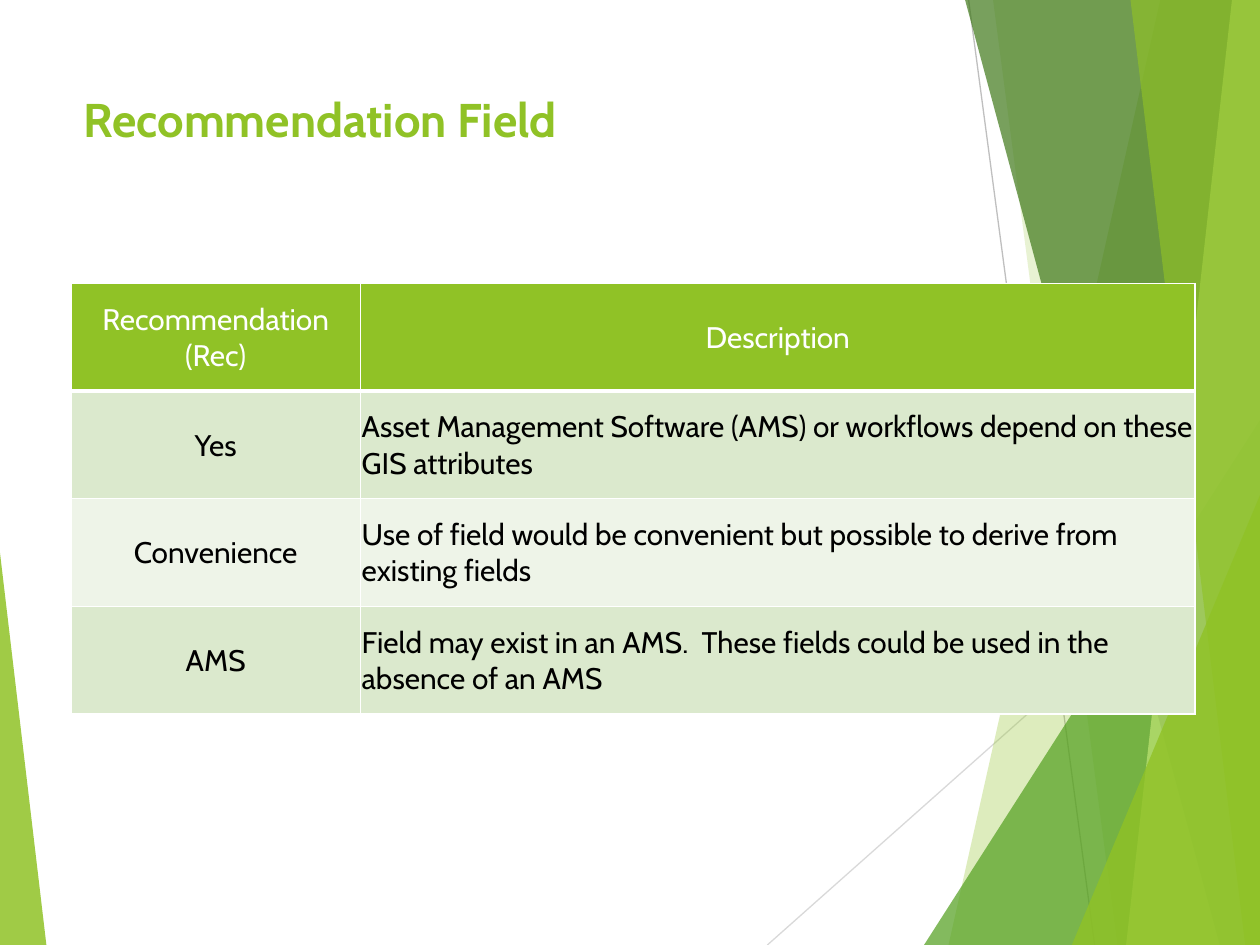
from lxml.etree import SubElement
from pptx import Presentation
from pptx.dml.color import RGBColor
from pptx.enum.shapes import MSO_CONNECTOR, MSO_SHAPE
from pptx.enum.text import MSO_ANCHOR, PP_ALIGN
from pptx.oxml.ns import qn
from pptx.util import Pt

FONT = "Cabin"
COLORS = {
    "lime": "90C226", "green": "54A021", "forest": "3F7819", "pale": "C0E474",
    "line": "BFBFBF", "light_line": "D9D9D9",
    "white": "FFFFFF", "black": "000000",
    "odd_row": "DBE9CD", "even_row": "EEF4E8",
}
ROWS = [
    ("Recommendation (Rec)", "Description"),
    ("Yes", "Asset Management Software (AMS) or workflows depend on these GIS attributes"),
    ("Convenience", "Use of field would be convenient but possible to derive from existing fields"),
    ("AMS", "Field may exist in an AMS.  These fields could be used in the absence of an AMS"),
]


def rgb(name):
    return RGBColor.from_string(COLORS[name])


def paint(shape, color, opacity):
    shape.shadow.inherit = False
    shape.line.fill.background()
    shape.fill.solid()
    shape.fill.fore_color.rgb = rgb(color)
    fill_color = shape.fill._xPr.find(qn("a:solidFill"))[0]
    SubElement(fill_color, qn("a:alpha"), val=str(opacity * 1000))


def style_text(paragraph, size, color, bold=False):
    for run in paragraph.runs:
        run.font.name = FONT
        run.font.size = Pt(size)
        run.font.bold = bold
        run.font.color.rgb = rgb(color)


def add_ray(slide, start, end, color):
    ray = slide.shapes.add_connector(MSO_CONNECTOR.STRAIGHT, *map(Pt, start + end))
    ray.line.color.rgb = rgb(color)
    ray.line.width = Pt(0.75)
    SubElement(ray._element.spPr, qn("a:effectLst"))


def add_band(slide, right, top, bottom, top_reach, bottom_reach, color, opacity):
    """Band along the right edge; each reach is its width at that end."""
    builder = slide.shapes.build_freeform(Pt(right - top_reach), Pt(top))
    builder.add_line_segments([
        (Pt(right), Pt(top)), (Pt(right), Pt(bottom)), (Pt(right - bottom_reach), Pt(bottom)),
    ])
    paint(builder.convert_to_shape(), color, opacity)


def add_wedge(slide, left, bottom, width, height, apex, color, opacity):
    wedge = slide.shapes.add_shape(
        MSO_SHAPE.ISOSCELES_TRIANGLE, Pt(left), Pt(bottom - height), Pt(width), Pt(height))
    wedge.adjustments[0] = apex
    paint(wedge, color, opacity)


def add_facets(slide, left, top, width, height):
    right, bottom = left + width, top + height
    # Thin rays
    add_ray(slide, (right - 166.5, top), (right - 94.5, bottom), "line")
    add_ray(slide, (right, top + 290), (right - 281.5, bottom), "light_line")
    # Overlapping bands and wedges on the right
    add_band(slide, right, top, bottom, 57, 178, "lime", 30)
    add_band(slide, right, top, bottom, 152.5, 81.5, "lime", 20)
    add_wedge(slide, right - 192, bottom, 192, 300, 1, "green", 72)
    add_band(slide, right, top, bottom, 168.5, 23, "forest", 70)
    add_band(slide, right, top, bottom, 16, 76.5, "pale", 70)
    add_band(slide, right, top, bottom, 74, 8.5, "lime", 65)
    add_wedge(slide, right - 107.5, bottom, 107.5, 257, 1, "lime", 80)
    # Wedge in the lower left corner
    add_wedge(slide, left, bottom, 26.5, 224, 0, "lime", 85)


def set_title(slide, left, top, width, height):
    title = slide.shapes.title
    title.left, title.top, title.width, title.height = map(Pt, (left, top, width, height))
    title.text_frame.text = "Recommendation Field"
    title.text_frame.vertical_anchor = MSO_ANCHOR.TOP
    heading = title.text_frame.paragraphs[0]
    heading.alignment = PP_ALIGN.LEFT
    style_text(heading, 27, "lime", bold=True)


def set_borders(cell, bottom_width):
    properties = cell._tc.get_or_add_tcPr()
    widths = {"lnL": 1, "lnR": 1, "lnT": 1, "lnB": bottom_width}
    for position, (side, width) in enumerate(widths.items()):
        border = properties.makeelement(qn(f"a:{side}"), {"w": str(Pt(width))})
        fill = SubElement(border, qn("a:solidFill"))
        SubElement(fill, qn("a:srgbClr"), val=COLORS["white"])
        properties.insert(position, border)


def add_recommendations(slide, left, top, width, height):
    table = slide.shapes.add_table(
        len(ROWS), 2, Pt(left), Pt(top), Pt(width), Pt(height)).table
    name_width = 165.5
    table.columns[0].width = Pt(name_width)
    table.columns[1].width = Pt(width - name_width)
    for row, texts in enumerate(ROWS):
        header = row == 0
        fill = "lime" if header else "odd_row" if row % 2 else "even_row"
        for column, text in enumerate(texts):
            cell = table.cell(row, column)
            cell.fill.solid()
            cell.fill.fore_color.rgb = rgb(fill)
            cell.vertical_anchor = MSO_ANCHOR.MIDDLE
            cell.margin_left = cell.margin_right = cell.margin_top = Pt(0.7)
            cell.margin_bottom = Pt(0)
            set_borders(cell, 3 if header else 1)
            cell.text_frame.text = text
            paragraph = cell.text_frame.paragraphs[0]
            centred = header or column == 0
            paragraph.alignment = PP_ALIGN.CENTER if centred else PP_ALIGN.LEFT
            style_text(paragraph, 17, "white" if header else "black")


def main():
    deck = Presentation()
    deck.slide_width, deck.slide_height = Pt(720), Pt(540)
    slide = deck.slides.add_slide(deck.slide_layouts[5])
    add_facets(slide, 0, 0, 720, 540)
    set_title(slide, 40.5, 48, 507.5, 104)
    add_recommendations(slide, 40.5, 162, 642.5, 246)
    deck.save("out.pptx")


if __name__ == "__main__":
    main()
